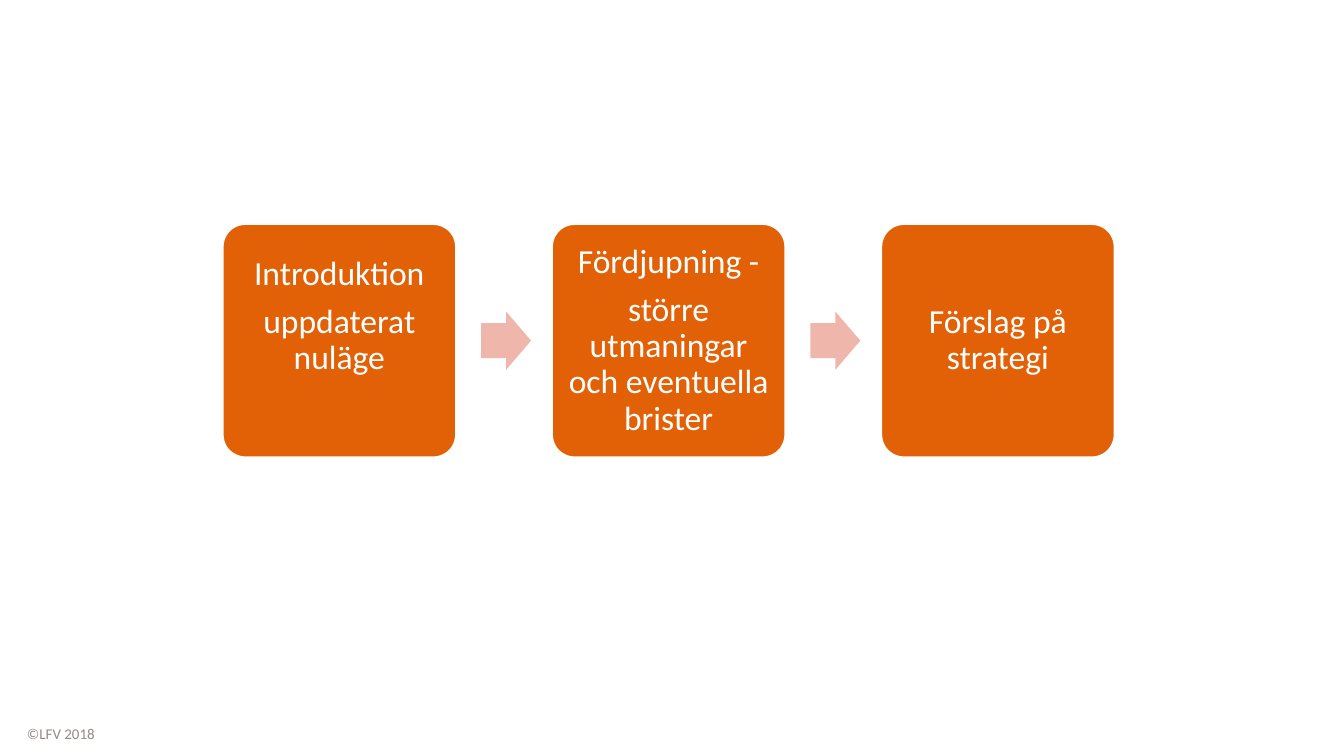
from pptx import Presentation
from pptx.dml.color import RGBColor
from pptx.enum import shapes, text
from pptx.util import Pt

# Content
STEPS = [
    ["Introduktion", "uppdaterat nuläge"],
    ["Fördjupning -", "större utmaningar och eventuella brister"],
    ["Förslag på strategi"],
]
FOOTER = "©LFV 2018"

# Style
ORANGE = RGBColor(0xE3, 0x61, 0x06)
PINK = RGBColor(0xEF, 0xB7, 0xAB)
GREY = RGBColor(0x94, 0x8A, 0x82)
WHITE = RGBColor(0xFF, 0xFF, 0xFF)
FONT = "Calibri"

# Layout in points
WIDTH, HEIGHT = 720, 405
LEFT, TOP, BOX = 118.8, 119.5, 126
PITCH = BOX * 1.4
ARROW_W, ARROW_H, ARROW_GAP = 26.7, 31.2, 13
INSET = 5
FIRST_LIFT = 26  # the first step's text sits above the middle


def write(sp, lines, size, color, insets, align=text.PP_ALIGN.LEFT,
          anchor=text.MSO_ANCHOR.TOP, spacing=1.0, gap=0):
    tf = sp.text_frame
    tf.word_wrap = True
    tf.vertical_anchor = anchor
    (tf.margin_left, tf.margin_top,
     tf.margin_right, tf.margin_bottom) = [Pt(v) for v in insets]
    for i, line in enumerate(lines):
        p = tf.add_paragraph() if i else tf.paragraphs[0]
        p.alignment = align
        p.line_spacing = spacing
        p.space_before = Pt(gap if i else 0)
        r = p.add_run()
        r.text = line
        r.font.name = FONT
        r.font.size = Pt(size)
        r.font.color.rgb = color


def add_shape(s, kind, x, y, w, h, fill, adjustments):
    sp = s.shapes.add_shape(kind, Pt(x), Pt(y), Pt(w), Pt(h))
    sp.shadow.inherit = False
    sp.fill.solid()
    sp.fill.fore_color.rgb = fill
    sp.line.fill.background()
    for i, value in enumerate(adjustments):
        sp.adjustments[i] = value
    return sp


prs = Presentation()
prs.slide_width, prs.slide_height = Pt(WIDTH), Pt(HEIGHT)
s = prs.slides.add_slide(prs.slide_layouts[6])

# Footer
footer = s.shapes.add_textbox(Pt(0), Pt(384.5), Pt(74), Pt(20))
write(footer, [FOOTER], 8, GREY, (14.4, 3.6, 7.2, 7.2))

# Steps, with an arrow between neighbours
for i, lines in enumerate(STEPS):
    x = LEFT + i * PITCH
    box = add_shape(s, shapes.MSO_SHAPE.ROUNDED_RECTANGLE, x, TOP, BOX, BOX,
                    ORANGE, [0.1])
    box.line.color.rgb = WHITE
    box.line.width = Pt(2)
    bottom = INSET + (FIRST_LIFT if i == 0 else 0)
    write(box, lines, 18, WHITE, (INSET, INSET, INSET, bottom),
          align=text.PP_ALIGN.CENTER, anchor=text.MSO_ANCHOR.MIDDLE,
          spacing=0.9, gap=6.3)
    if i < len(STEPS) - 1:
        add_shape(s, shapes.MSO_SHAPE.RIGHT_ARROW, x + BOX + ARROW_GAP,
                  TOP + (BOX - ARROW_H) / 2, ARROW_W, ARROW_H, PINK, [0.6, 0.5])

prs.save("out.pptx")
